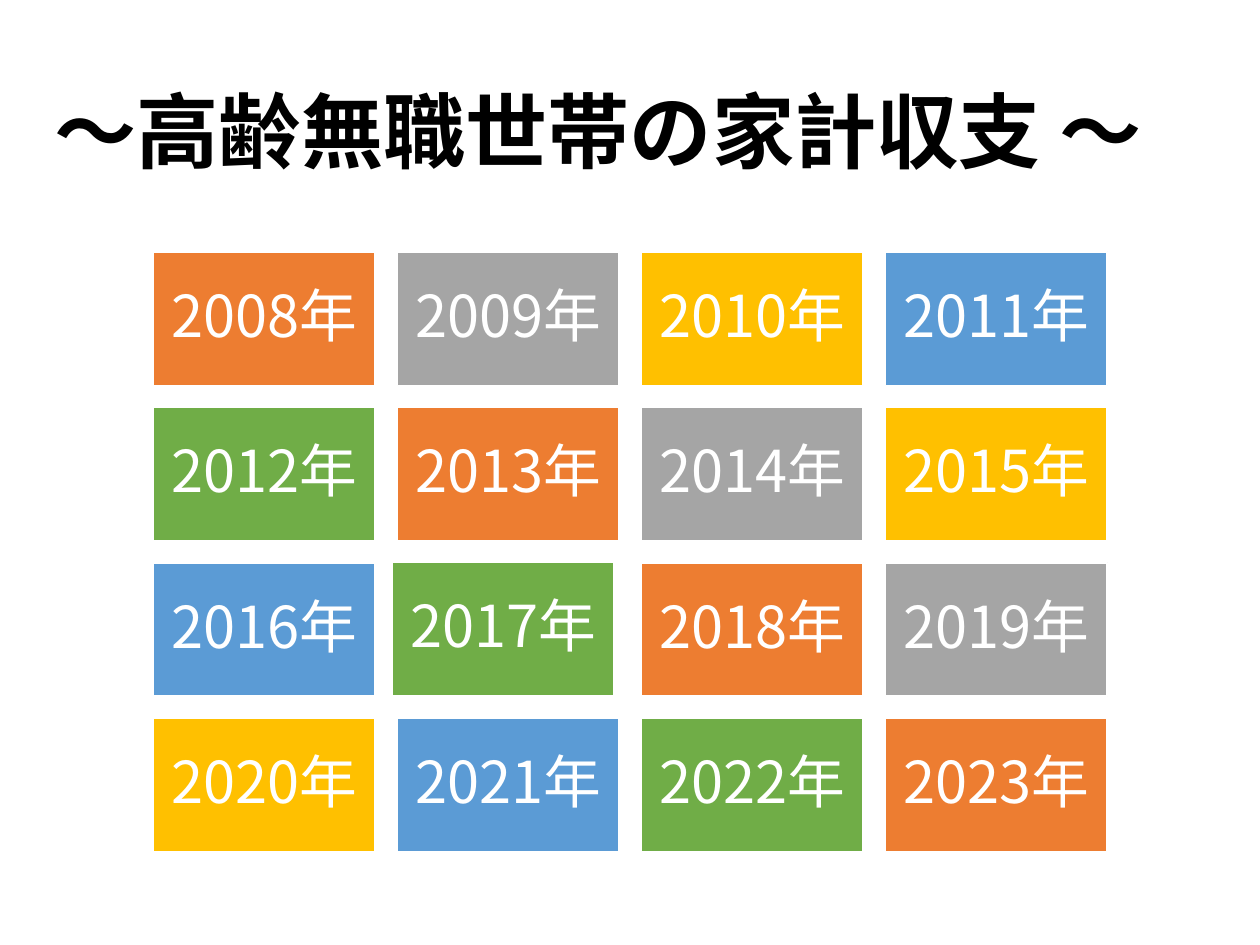
from dataclasses import dataclass

from lxml.etree import SubElement
from pptx import Presentation
from pptx.dml.color import RGBColor
from pptx.enum.shapes import MSO_SHAPE
from pptx.enum.text import MSO_ANCHOR, PP_ALIGN
from pptx.oxml.ns import qn
from pptx.util import Pt


@dataclass(frozen=True)
class Theme:
    font: str = "Noto Sans CJK JP"
    title_size: int = 47
    year_size: int = 33
    black: str = "000000"
    white: str = "FFFFFF"
    tiles: tuple = ("ED7D31", "A5A5A5", "FFC000", "5B9BD5", "70AD47")


THEME = Theme()
FIRST_YEAR, LAST_YEAR = 2008, 2023
COLUMNS = 4
GRID_LEFT, GRID_TOP = 87.6, 144
COLUMN_STEP, ROW_STEP = 139.5, 88.8
TILE_WIDTH, TILE_HEIGHT = 126.7, 76.3
TILE_INSET = 10.1
SHIFTS = {2017: (-3, -0.4)}


def format_paragraph(paragraph, size, color, align, bold=False):
    paragraph.alignment = align
    paragraph.line_spacing = 0.9
    font = paragraph.font
    font.size = Pt(size)
    font.bold = bold
    font.color.rgb = RGBColor.from_string(color)
    font.name = THEME.font
    defaults = paragraph._p.pPr.find(qn("a:defRPr"))
    SubElement(defaults, qn("a:ea"), typeface=THEME.font)


def add_title(slide, text):
    title = slide.shapes.title
    title.left, title.top = Pt(23.8), Pt(25.2)
    title.width, title.height = Pt(674), Pt(104.4)
    frame = title.text_frame
    frame.text = text
    frame.word_wrap = True
    frame.vertical_anchor = MSO_ANCHOR.MIDDLE
    format_paragraph(frame.paragraphs[0], THEME.title_size, THEME.black,
                     PP_ALIGN.LEFT, bold=True)


def add_year_tile(slide, year, left, top, color):
    tile = slide.shapes.add_shape(MSO_SHAPE.RECTANGLE, Pt(left), Pt(top),
                                  Pt(TILE_WIDTH), Pt(TILE_HEIGHT))
    tile.shadow.inherit = False
    tile.fill.solid()
    tile.fill.fore_color.rgb = RGBColor.from_string(color)
    tile.line.color.rgb = RGBColor.from_string(THEME.white)
    tile.line.width = Pt(1)
    frame = tile.text_frame
    frame.text = f"{year}年"
    frame.word_wrap = True
    frame.vertical_anchor = MSO_ANCHOR.MIDDLE
    frame.margin_left = frame.margin_right = Pt(TILE_INSET)
    frame.margin_top = frame.margin_bottom = Pt(TILE_INSET)
    format_paragraph(frame.paragraphs[0], THEME.year_size, THEME.white,
                     PP_ALIGN.CENTER)


def add_year_grid(slide):
    for index, year in enumerate(range(FIRST_YEAR, LAST_YEAR + 1)):
        row, column = divmod(index, COLUMNS)
        shift_x, shift_y = SHIFTS.get(year, (0, 0))
        add_year_tile(slide, year,
                      GRID_LEFT + column * COLUMN_STEP + shift_x,
                      GRID_TOP + row * ROW_STEP + shift_y,
                      THEME.tiles[index % len(THEME.tiles)])


def main():
    presentation = Presentation()
    presentation.slide_width, presentation.slide_height = Pt(720), Pt(540)
    slide = presentation.slides.add_slide(presentation.slide_layouts[5])
    add_title(slide, "～高齢無職世帯の家計収支 ～")
    add_year_grid(slide)
    presentation.save("out.pptx")


if __name__ == "__main__":
    main()
